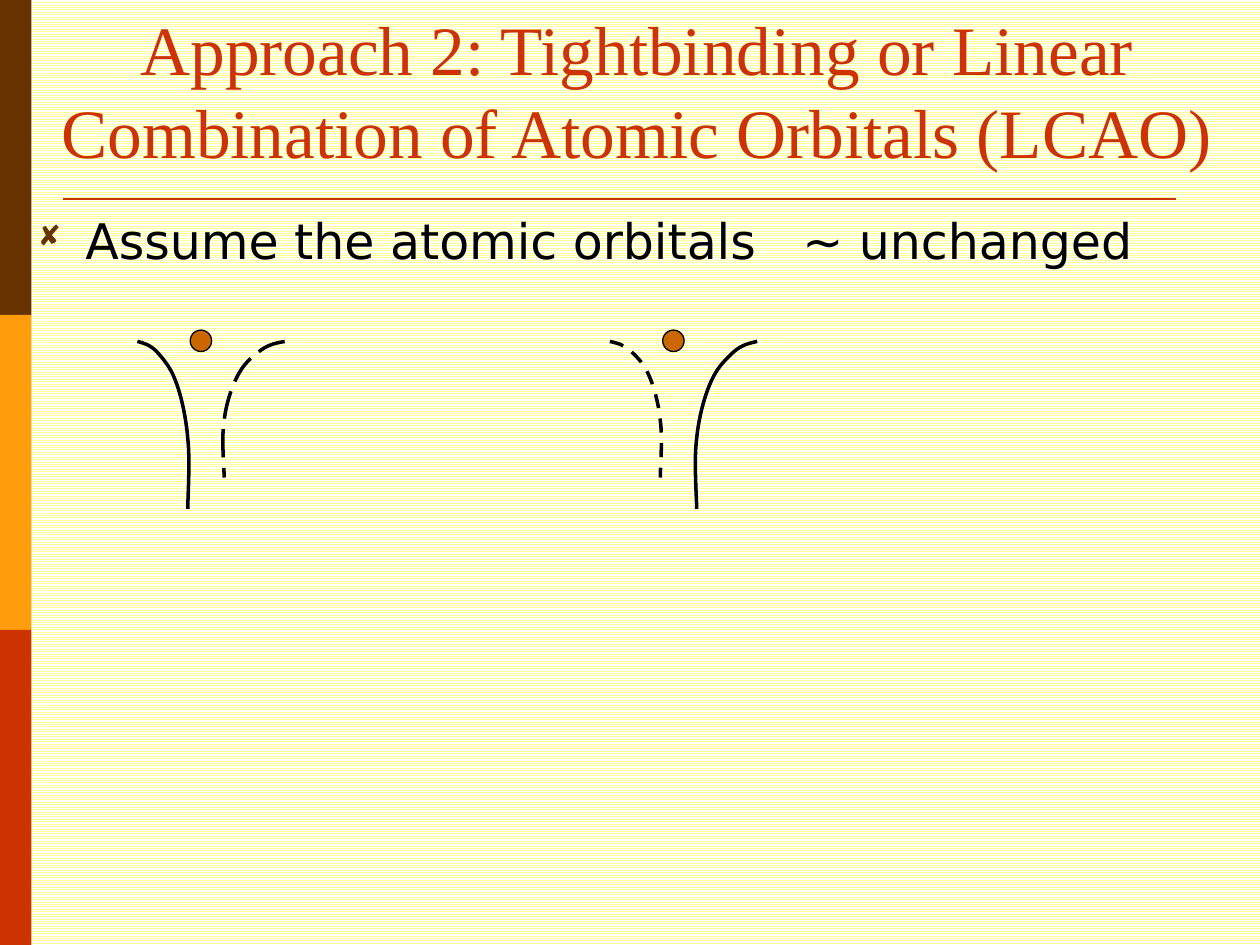
"""Build the slide that introduces the tight-binding (LCAO) approach."""
from dataclasses import dataclass
from typing import Optional

from lxml import etree
from pptx import Presentation
from pptx import util as u
from pptx.dml.color import RGBColor
from pptx.enum import dml, shapes, text
from pptx.oxml import ns

COLORS = {
    "brown": "663300", "orange": "FF9D0D", "red": "CC3300", "electron": "CC6600",
    "black": "000000", "stripe": "FFFF99", "white": "FFFFFF",
}
PROFILE = [
    (0.12, 0.01), (0.25, 0.02), (0.38, 0.06), (0.5, 0.1),
    (0.65, 0.15), (0.75, 0.23), (0.87, 0.32), (0.97, 0.46),
    (1, 0.58), (1.05, 0.71), (1, 0.93), (1, 1),
]
RIM_TOP = 2.71


@dataclass
class Wall:
    """One side of a potential well, running from its rim inwards and down."""
    rim: float
    span: float
    depth: float
    dash: Optional[dml.MSO_LINE] = None


def color(name: str) -> RGBColor:
    """Return the palette colour of that name."""
    return RGBColor.from_string(COLORS[name])


def set_all(target, values: dict) -> None:
    """Set every attribute in values on target."""
    for key, value in values.items():
        setattr(target, key, value)


def add_filled(slide, kind, box: tuple, fill: str):
    """Add a preset shape with a solid fill and no outline."""
    shape = slide.shapes.add_shape(kind, *map(u.Inches, box))
    shape.shadow.inherit = False
    shape.fill.solid()
    shape.fill.fore_color.rgb = color(fill)
    shape.line.fill.background()
    return shape


def outline(shape, name: str, width: float) -> None:
    """Give a shape or connector a solid line."""
    shape.line.color.rgb = color(name)
    shape.line.width = u.Pt(width)


def smooth(curve) -> None:
    """Turn each three straight segments of an outline into one cubic curve."""
    segments = list(curve._element.iter(ns.qn("a:lnTo")))
    for start in range(0, len(segments), 3):
        cubic = etree.Element(ns.qn("a:cubicBezTo"))
        segments[start].addprevious(cubic)
        for segment in segments[start:start + 3]:
            cubic.append(segment[0])
            segment.getparent().remove(segment)


def add_wall(slide, wall: Wall) -> None:
    """Draw the wall as a smooth open outline."""
    builder = slide.shapes.build_freeform(
        u.Inches(wall.rim), u.Inches(RIM_TOP), scale=1.0)
    builder.add_line_segments(
        [(u.Inches(wall.rim + x * wall.span), u.Inches(RIM_TOP + y * wall.depth))
         for x, y in PROFILE], close=False)
    curve = builder.convert_to_shape()
    smooth(curve)
    curve.shadow.inherit = False
    curve.fill.background()
    outline(curve, "black", 2)
    if wall.dash is not None:
        curve.line.dash_style = wall.dash


def write(frame, wording: str, font: dict, name: str, alignment, anchor):
    """Fill a text frame with one formatted paragraph and return it."""
    set_all(frame, {"word_wrap": True, "auto_size": text.MSO_AUTO_SIZE.NONE,
                    "vertical_anchor": anchor})
    paragraph = frame.paragraphs[0]
    paragraph.alignment = alignment
    run = paragraph.add_run()
    run.text = wording
    set_all(run.font, font)
    run.font.color.rgb = color(name)
    return paragraph


def add_bullet(paragraph, symbol: str, name: str, percent: int, indent: float) -> None:
    """Give a paragraph a coloured bullet and a hanging indent."""
    props = paragraph._p.get_or_add_pPr()
    props.set("marL", str(u.Inches(indent)))
    props.set("indent", str(-u.Inches(indent)))
    bullet_color = etree.SubElement(props, ns.qn("a:buClr"))
    etree.SubElement(bullet_color, ns.qn("a:srgbClr"), val=COLORS[name])
    etree.SubElement(props, ns.qn("a:buSzPct"), val=str(percent * 1000))
    etree.SubElement(props, ns.qn("a:buFont"), typeface="Wingdings")
    etree.SubElement(props, ns.qn("a:buChar"), char=symbol)


def add_frame(slide) -> None:
    """Add the striped background, the side bars and the title rule."""
    background = slide.background.fill
    background.patterned()
    background.pattern = dml.MSO_PATTERN.NARROW_HORIZONTAL
    background.fore_color.rgb = color("stripe")
    background.back_color.rgb = color("white")
    for row, name in enumerate(("brown", "orange", "red")):
        add_filled(slide, shapes.MSO_SHAPE.RECTANGLE, (0, 2.5 * row, 0.25, 2.5), name)
    rule = slide.shapes.add_connector(
        shapes.MSO_CONNECTOR.STRAIGHT, *map(u.Inches, (0.5, 1.58, 9.33, 1.58)))
    outline(rule, "red", 1.5)
    etree.SubElement(rule._element.spPr, ns.qn("a:effectLst"))


def main() -> None:
    """Build and save the slide."""
    deck = Presentation()
    set_all(deck, {"slide_width": u.Inches(10), "slide_height": u.Inches(7.5)})
    slide = deck.slides.add_slide(deck.slide_layouts.get_by_name("Title Only"))
    add_frame(slide)

    title = slide.shapes.title
    set_all(title, {"left": u.Inches(0.38), "top": u.Inches(0.17),
                    "width": u.Inches(9.35), "height": u.Inches(1.25)})
    write(title.text_frame,
          "Approach 2: Tightbinding or Linear Combination of Atomic Orbitals (LCAO)",
          {"name": "Times New Roman", "size": u.Pt(39.6)}, "red",
          text.PP_ALIGN.CENTER, text.MSO_ANCHOR.BOTTOM)

    body = slide.shapes.add_textbox(*map(u.Inches, (0.2, 1.62, 9.5, 3.79)))
    assumption = write(body.text_frame, "Assume the atomic orbitals   ~ unchanged",
                       {"name": "DejaVu Sans", "size": u.Pt(28)}, "black",
                       text.PP_ALIGN.LEFT, text.MSO_ANCHOR.TOP)
    assumption.space_before = u.Pt(5.6)
    add_bullet(assumption, "◻", "brown", 75, 0.38)

    for left in (1.51, 5.26):
        electron = add_filled(slide, shapes.MSO_SHAPE.OVAL,
                              (left, 2.62, 0.17, 0.17), "electron")
        outline(electron, "black", 0.75)

    for wall in (
        Wall(1.09, 0.4, 1.33),
        Wall(4.84, 0.4, 1.08, dml.MSO_LINE.DASH),
        Wall(2.26, -0.48, 1.08, dml.MSO_LINE.LONG_DASH),
        Wall(6.01, -0.48, 1.33),
    ):
        add_wall(slide, wall)

    deck.save("out.pptx")


if __name__ == "__main__":
    main()
